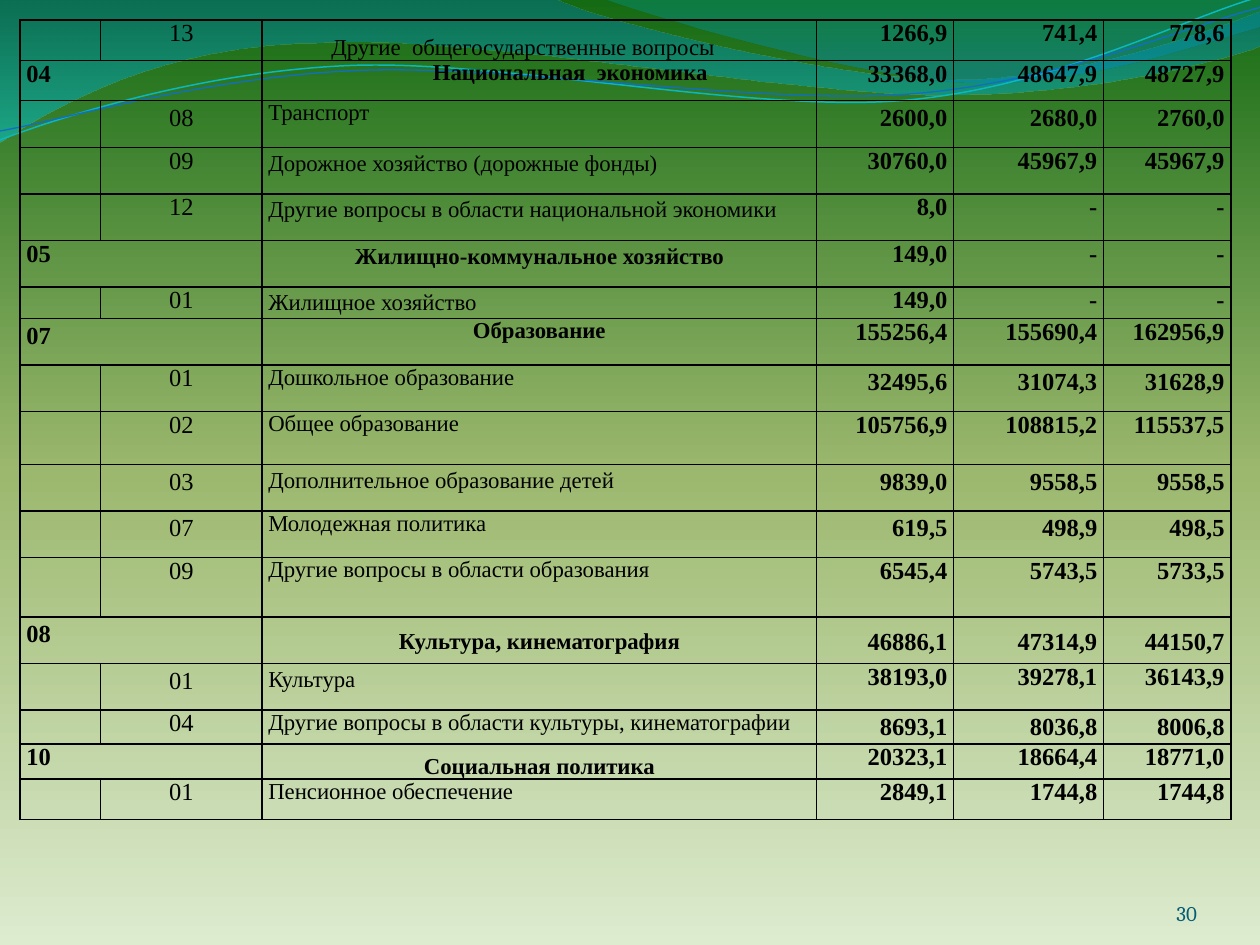
import math
from dataclasses import dataclass, field
from typing import Optional

import pptx
import pptx.dml.color
import pptx.enum.text
import pptx.oxml.ns
import pptx.util
from lxml import etree
from pptx.util import Inches

qn = pptx.oxml.ns.qn
ALIGN = pptx.enum.text.PP_ALIGN
ANCHOR = pptx.enum.text.MSO_ANCHOR


@dataclass(frozen=True)
class Theme:
    table_font: str = "Times New Roman"
    number_font: str = "Cambria"
    ink: str = "000000"
    page_number: str = "045D75"
    code_size: float = 14
    title_size: float = 13
    page_size: float = 12
    background: tuple = ((0, "DDEBCF", 100), (50, "9CB86E", 100), (100, "156B13", 100))
    wide_wave: tuple = ((0, "0074A1", 45), (100, "00C6CF", 55))
    right_wave: tuple = ((0, "00A1A9", 30), (80, "008BBF", 45))


THEME = Theme()


@dataclass(frozen=True)
class BudgetRow:
    height: float
    code: str
    title: str
    values: str
    section: bool = False
    spaced: str = ""  # parts with open line spacing: c code, t title, v values
    title_format: dict = field(default_factory=dict)
    value_anchor: Optional[ANCHOR] = None


@dataclass(frozen=True)
class Wave:
    """Start point, then Bezier curves (6 numbers) and straight lines (2 numbers)."""
    start: tuple
    segments: tuple
    gradient: tuple = ()
    line: str = ""
    width: float = 0
    rotation: float = 0
    centre: tuple = (0, 0)


WAVES = (
    Wave((0, -0.01), ((4.4, -0.01), (4.76, 0.17, 6.64, 0.63, 7.58, 0.63),
                      (8.53, 0.63, 9.58, 0.26, 10, 0.09), (10.01, 0.36),
                      (9.83, 0.44, 8.7, 0.76, 7.46, 0.75), (6.22, 0.75, 3.82, 0.28, 2.57, 0.34),
                      (1.29, 0.35, 0.46, 0.83, -0.01, 1.13), (0, -0.01)), THEME.wide_wave),
    Wave((4.79, -0.01), ((5.09, 0.11, 6.82, 0.62, 7.69, 0.65),
                         (8.56, 0.69, 9.61, 0.32, 10, 0.21), (10, 0), (4.79, -0.01)),
         THEME.right_wave),
    Wave((0, 1.11), ((0.48, 0.93, 1.58, 0.57, 2.77, 0.52), (3.95, 0.47, 5.93, 0.89, 7.13, 0.8),
                     (8.33, 0.71, 9.38, 0.15, 9.98, -0.02)),
         line="0AB8BF", width=0.85, rotation=357.3, centre=(4.99, 0.57)),
    Wave((0, 1.04), ((0.47, 0.96, 1.64, 0.61, 2.83, 0.56), (4.03, 0.51, 5.97, 0.83, 7.17, 0.75),
                     (8.36, 0.67, 9.41, 0.21, 10, 0.06)),
         line="0F6FC6", width=0.75, rotation=357.3, centre=(5, 0.59)),
)

COLUMNS = (0.64, 1.28, 4.4, 1.09, 1.19, 1.01)
ROWS = (
    BudgetRow(0.32, "13", "Другие  общегосударственные вопросы", "1266,9 741,4 778,6",
              title_format=dict(anchor=ANCHOR.BOTTOM, align=None, margin=0.62, indent=-0.12)),
    BudgetRow(0.32, "04", "Национальная  экономика", "33368,0 48647,9 48727,9", True,
              title_format=dict(indent=0.49)),
    BudgetRow(0.37, "08", "Транспорт", "2600,0 2680,0 2760,0", spaced="cv"),
    BudgetRow(0.37, "09", "Дорожное хозяйство (дорожные фонды)", "30760,0 45967,9 45967,9", spaced="t"),
    BudgetRow(0.37, "12", "Другие вопросы в области национальной экономики", "8,0 - -", spaced="t"),
    BudgetRow(0.37, "05", "Жилищно-коммунальное хозяйство", "149,0 - -", True, "t"),
    BudgetRow(0.23, "01", "Жилищное хозяйство", "149,0 - -", spaced="t"),
    BudgetRow(0.37, "07", "Образование", "155256,4 155690,4 162956,9", True, "c"),
    BudgetRow(0.37, "01", "Дошкольное образование", "32495,6 31074,3 31628,9", spaced="v"),
    BudgetRow(0.42, "02", "Общее образование", "105756,9 108815,2 115537,5"),
    BudgetRow(0.37, "03", "Дополнительное образование детей", "9839,0 9558,5 9558,5", spaced="ctv"),
    BudgetRow(0.37, "07", "Молодежная политика", "619,5 498,9 498,5", spaced="cv"),
    BudgetRow(0.47, "09", "Другие вопросы в области образования", "6545,4 5743,5 5733,5"),
    BudgetRow(0.37, "08", "Культура, кинематография", "46886,1 47314,9 44150,7", True, "cv",
              dict(line_spacing=1.5, before=6), ANCHOR.MIDDLE),
    BudgetRow(0.37, "01", "Культура", "38193,0 39278,1 36143,9", spaced="ct"),
    BudgetRow(0.25, "04", "Другие вопросы в области культуры, кинематографии",
              "8693,1 8036,8 8006,8", spaced="v"),
    BudgetRow(0.28, "10", "Социальная политика", "20323,1 18664,4 18771,0", True,
              title_format=dict(anchor=ANCHOR.BOTTOM)),
    BudgetRow(0.32, "01", "Пенсионное обеспечение", "2849,1 1744,8 1744,8"),
)


def rgb(value: str) -> pptx.dml.color.RGBColor:
    return pptx.dml.color.RGBColor.from_string(value)


def set_gradient(fill, owner, stops: tuple, angle: int) -> None:
    fill.gradient()
    gradient = owner.find(".//" + qn("a:gradFill"))
    stop_list = gradient.find(qn("a:gsLst"))
    for old_stop in list(stop_list):
        stop_list.remove(old_stop)
    for position, color, opacity in stops:
        stop = etree.SubElement(stop_list, qn("a:gs"), pos=str(position * 1000))
        color_element = etree.SubElement(stop, qn("a:srgbClr"), val=color)
        if opacity < 100:
            etree.SubElement(color_element, qn("a:alpha"), val=str(opacity * 1000))
    gradient.find(qn("a:lin")).set("ang", str(angle * 60000))


def wave_points(wave: Wave) -> list:
    """All end and control points, turned back so that the shape's rotation restores them."""
    points = [wave.start]
    for segment in wave.segments:
        points.extend(zip(segment[::2], segment[1::2]))
    angle = math.radians(-wave.rotation)
    cosine, sine = math.cos(angle), math.sin(angle)
    cx, cy = wave.centre
    return [(Inches(cx + (x - cx) * cosine - (y - cy) * sine),
             Inches(cy + (x - cx) * sine + (y - cy) * cosine)) for x, y in points]


def bend_outline(shape, segments: tuple) -> None:
    """Join each three lines that stand for a curve into one Bezier segment."""
    lines = iter(shape.element.findall(".//" + qn("a:lnTo")))
    for segment in segments:
        first = next(lines)
        if len(segment) == 6:
            curve = etree.Element(qn("a:cubicBezTo"))
            first.addprevious(curve)
            for line in (first, next(lines), next(lines)):
                curve.append(line[0])
                line.getparent().remove(line)


def draw_wave(slide, wave: Wave) -> None:
    points = wave_points(wave)
    builder = slide.shapes.build_freeform(*points[0], scale=1.0)
    builder.add_line_segments(points[1:], close=bool(wave.gradient))
    shape = builder.convert_to_shape()
    bend_outline(shape, wave.segments)
    shape.shadow.inherit = False
    shape.rotation = wave.rotation
    if wave.gradient:
        set_gradient(shape.fill, shape.element, wave.gradient, 90)
        shape.line.fill.background()
    else:
        shape.fill.background()
        shape.line.color.rgb = rgb(wave.line)
        shape.line.width = pptx.util.Pt(wave.width)


def write_text(paragraph, text: str, *, size: float, font: str = THEME.table_font,
               color: str = THEME.ink, bold: bool = False, align: Optional[ALIGN] = None,
               line_spacing: Optional[float] = None, before: float = 0, after: float = 0,
               margin: float = 0, indent: float = 0) -> None:
    run = paragraph.add_run()
    run.text = text
    run.font.name, run.font.size, run.font.bold = font, pptx.util.Pt(size), bold
    run.font.color.rgb = rgb(color)
    paragraph.alignment = align
    paragraph.line_spacing = line_spacing
    paragraph.space_before, paragraph.space_after = pptx.util.Pt(before), pptx.util.Pt(after)
    properties = paragraph._p.get_or_add_pPr()
    properties.set("marL", str(Inches(margin)))
    properties.set("indent", str(Inches(indent)))


def style_cell(cell) -> None:
    cell.margin_left = cell.margin_right = Inches(0.05)
    cell.margin_top = cell.margin_bottom = 0
    properties = cell._tc.get_or_add_tcPr()
    for side in ("lnL", "lnR", "lnT", "lnB"):
        border = etree.SubElement(properties, qn("a:" + side), w=str(pptx.util.Pt(1)))
        solid = etree.SubElement(border, qn("a:solidFill"))
        etree.SubElement(solid, qn("a:srgbClr"), val=THEME.ink)
    cell.fill.background()


def fill_cell(cell, text: str, *, anchor: Optional[ANCHOR] = None, spaced: bool = False,
              **text_format) -> None:
    if anchor is not None:
        cell.vertical_anchor = anchor
    if spaced:
        text_format = dict(line_spacing=1.15, after=10) | text_format
    write_text(cell.text_frame.paragraphs[0], text, **text_format)


def draw_row(table, index: int, row: BudgetRow) -> None:
    table.rows[index].height = Inches(row.height)
    cells = [table.cell(index, column) for column in range(len(COLUMNS))]
    for cell in cells:
        style_cell(cell)
    if row.section:
        cells[0].merge(cells[1])
    else:  # keep the empty cell from stretching a low row
        etree.SubElement(cells[0].text_frame.paragraphs[0]._p, qn("a:endParaRPr"), sz="1000")
    fill_cell(cells[0 if row.section else 1], row.code, size=THEME.code_size, bold=row.section,
              align=None if row.section else ALIGN.CENTER, spaced="c" in row.spaced)
    title_format = dict(align=ALIGN.CENTER if row.section else ALIGN.JUSTIFY) | row.title_format
    fill_cell(cells[2], row.title, size=THEME.title_size, bold=row.section,
              spaced="t" in row.spaced, **title_format)
    for cell, value in zip(cells[3:], row.values.split()):
        fill_cell(cell, value, size=THEME.code_size, bold=True, align=ALIGN.RIGHT,
                  anchor=row.value_anchor, spaced="v" in row.spaced)


def main() -> None:
    presentation = pptx.Presentation()
    presentation.slide_width, presentation.slide_height = Inches(10), Inches(7.5)
    slide = presentation.slides.add_slide(presentation.slide_layouts[6])

    # Background and waves
    set_gradient(slide.background.fill, slide.element, THEME.background, 270)
    for wave in WAVES:
        draw_wave(slide, wave)

    # Page number
    box = slide.shapes.add_textbox(Inches(8.67), Inches(6.95), Inches(0.83), Inches(0.4))
    frame = box.text_frame
    frame.word_wrap = True
    frame.vertical_anchor = ANCHOR.BOTTOM
    frame.margin_left = frame.margin_right = frame.margin_top = frame.margin_bottom = 0
    write_text(frame.paragraphs[0], "30", size=THEME.page_size, font=THEME.number_font,
               color=THEME.page_number, align=ALIGN.RIGHT)

    # Budget table
    table = slide.shapes.add_table(len(ROWS), len(COLUMNS), Inches(0.16), Inches(0.16),
                                   Inches(sum(COLUMNS)), Inches(6.38)).table
    table.first_row = table.horz_banding = False
    for column, width in zip(table.columns, COLUMNS):
        column.width = Inches(width)
    for index, row in enumerate(ROWS):
        draw_row(table, index, row)

    presentation.save("out.pptx")


if __name__ == "__main__":
    main()
